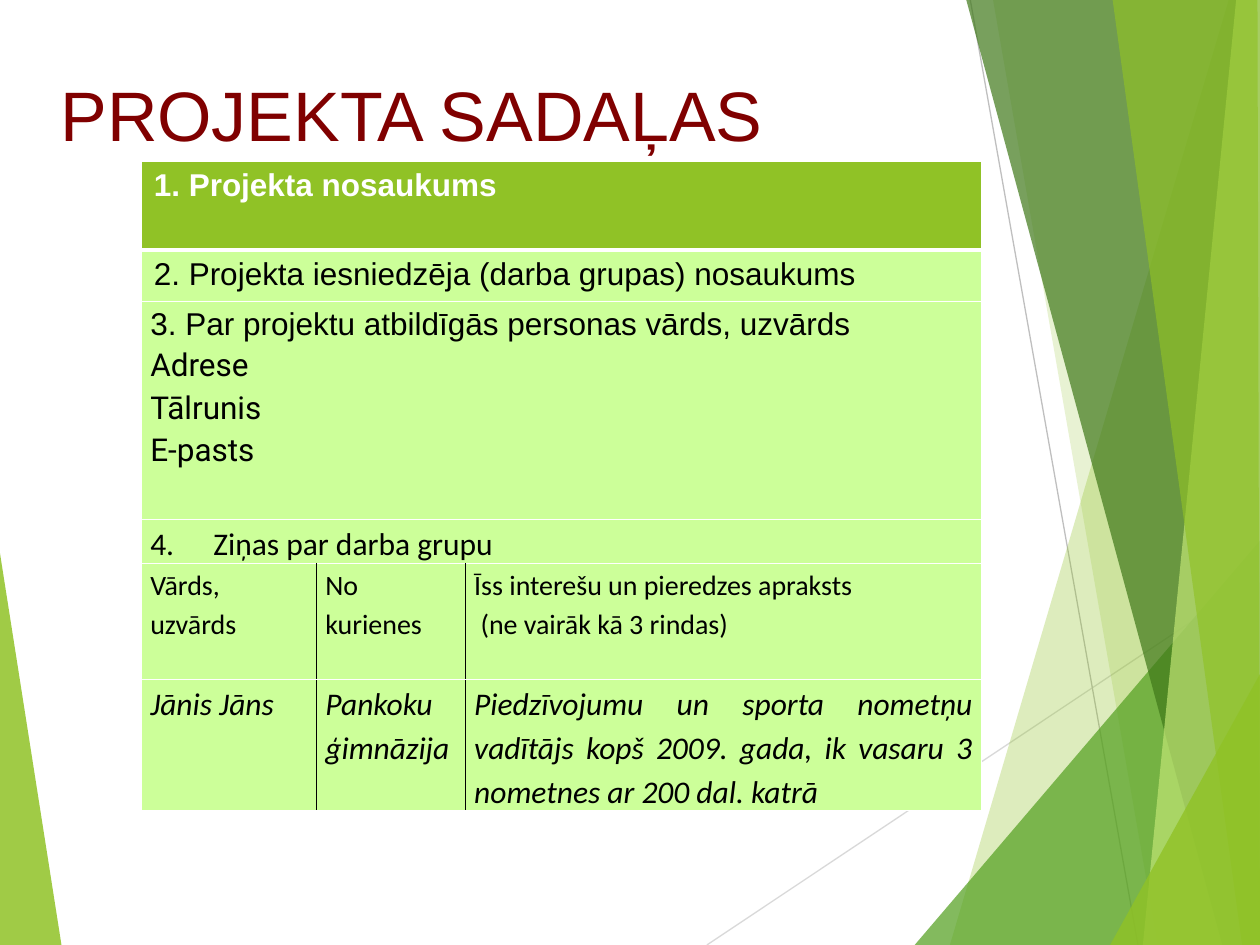
"""Build the project sections slide with a faceted green backdrop."""
import pptx
import pptx.util
import pptx.dml.color
import pptx.enum.shapes
import pptx.enum.text
import pptx.oxml.ns
from dataclasses import dataclass
from lxml import etree
from pptx.util import Cm, Pt

W, H = 25.4, 19.05


@dataclass(frozen=True)
class Theme:
    lime: str = "90C226"
    green: str = "54A021"
    dark: str = "3F7819"
    pale: str = "C0E474"
    cell: str = "CCFF99"
    title: str = "800000"
    ink: str = "000000"
    white: str = "FFFFFF"
    sans: str = "Arial"
    contact: str = "Roboto"
    body: str = "Calibri"
    title_pt: int = 40
    text_pt: int = 18
    small_pt: int = 16


T = Theme()
TITLE = "PROJEKTA SADAĻAS"
RIGHT_SIDE = [(W, H), (W, 0)]
CORNER = [(W, H)]
LEFT_FACET = ([(0, 11.15), (1.24, H), (0, H)], T.lime, 85)
LINES = [
    ((14.25, H), (W, 11.61), "D9D9D9"),
    ((19.56, 0), (22.94, H), "BFBFBF"),
]
RIGHT_FACETS = [
    ([(24.77, 0), (19.15, H)] + RIGHT_SIDE, T.lime, 30),
    ([(20.02, 0), (23.34, H)] + RIGHT_SIDE, T.lime, 20),
    ([(18.44, H), (W, 10.9)] + CORNER, T.green, 72),
    ([(19.48, 0), (24.64, H)] + RIGHT_SIDE, T.dark, 70),
    ([(24.92, 0), (23.04, H)] + RIGHT_SIDE, T.pale, 70),
    ([(22.43, 0), (25.04, H), (W, H), (25.35, 0)], T.lime, 65),
    ([(22.38, H), (W, 13.59)] + CORNER, T.lime, 80),
]

COLUMNS = [3.53, 3, 10.41]
HEADING = dict(font=T.sans, color=T.white, fill=T.lime, bold=True, loose=False)
PLAIN = dict(font=T.sans, loose=False)
FORM = dict(font=T.sans, rest=T.contact)
GROUP = dict(font=T.body)
LABELS = dict(font=T.body, size=T.small_pt)
EXAMPLE = dict(font=T.body, italic=True)
ROWS = [
    (1.78, HEADING, [["1. Projekta nosaukums"]]),
    (1.04, PLAIN, [["2. Projekta iesniedzēja (darba grupas) nosaukums"]]),
    (4.39, FORM, [["3. Par projektu atbildīgās personas vārds, uzvārds",
                   "Adrese", "Tālrunis", "E-pasts"]]),
    (0.89, GROUP, [["4.\tZiņas par darba grupu"]]),
    (2.34, LABELS, [["Vārds, uzvārds"], ["No kurienes"],
                    ["Īss interešu un pieredzes apraksts",
                     " (ne vairāk kā 3 rindas)"]]),
    (2.64, EXAMPLE, [["Jānis Jāns"], ["Pankoku ģimnāzija"],
                     ["Piedzīvojumu un sporta nometņu vadītājs kopš 2009. gada, "
                      "ik vasaru 3 nometnes ar 200 dal. katrā"]]),
]


def rgb(color):
    return pptx.dml.color.RGBColor.from_string(color)


def add(parent, tag, **attrs):
    return etree.SubElement(parent, pptx.oxml.ns.qn(tag), attrs)


def set_font(p, name, size, color, bold=False, italic=False):
    f = p.font
    f.name, f.size, f.bold, f.italic = name, Pt(size), bold, italic
    f.color.rgb = rgb(color)


def add_facet(shapes, points, color, opacity):
    points = [(Cm(x), Cm(y)) for x, y in points]
    builder = shapes.build_freeform(*points[0])
    builder.add_line_segments(points[1:], close=True)
    s = builder.convert_to_shape()
    s.shadow.inherit = False
    s.line.fill.background()
    s.fill.solid()
    s.fill.fore_color.rgb = rgb(color)
    clr = s._element.spPr.find(".//" + pptx.oxml.ns.qn("a:srgbClr"))
    add(clr, "a:alpha", val=str(opacity * 1000))


def add_line(shapes, start, end, color):
    s = shapes.add_connector(pptx.enum.shapes.MSO_CONNECTOR.STRAIGHT,
                             *[Cm(v) for v in start + end])
    s.line.color.rgb = rgb(color)
    s.line.width = Pt(0.75)
    add(s._element.spPr, "a:effectLst")


def add_title(shapes):
    tf = shapes.add_textbox(Cm(0.97), Cm(0.97), Cm(22.86), Cm(3.81)).text_frame
    tf.word_wrap = True
    p = tf.paragraphs[0]
    p.text = TITLE
    p.line_spacing = 1.2
    set_font(p, T.sans, T.title_pt, T.title)


def set_borders(cell, row, col, split):
    black_left, black_right = split and col > 0, split and col < len(COLUMNS) - 1
    sides = {
        "L": (T.ink if black_left else T.white, 1),
        "R": (T.ink if black_right else T.white, 1),
        "T": (T.white, 3 if row == 1 else 1),
        "B": (T.white, 3 if row == 0 else 1),
    }
    for side, (color, width) in sides.items():
        ln = add(cell._tc.get_or_add_tcPr(), "a:ln" + side, w=str(Pt(width)))
        add(add(ln, "a:solidFill"), "a:srgbClr", val=color)


def fill_text(cell, texts, style):
    loose = style.get("loose", True)
    cell.margin_left = cell.margin_right = Cm(0.18 if loose else 0.25)
    cell.margin_top = cell.margin_bottom = Cm(0 if loose else 0.13)
    tf = cell.text_frame
    for i, text in enumerate(texts):
        p = tf.paragraphs[0] if i == 0 else tf.add_paragraph()
        p.text = text
        if loose:
            p.alignment = pptx.enum.text.PP_ALIGN.JUSTIFY
            p.line_spacing = 1.15
        if "\t" in text:
            tabs = add(p._p.get_or_add_pPr(), "a:tabLst")
            add(tabs, "a:tab", pos=str(Cm(1.27)), algn="l")
        name = style.get("rest", style["font"]) if i else style["font"]
        set_font(p, name, style.get("size", T.text_pt), style.get("color", T.ink),
                 style.get("bold", False), style.get("italic", False))


def add_sections(shapes):
    heights = [height for height, _, _ in ROWS]
    table = shapes.add_table(len(ROWS), len(COLUMNS), Cm(2.85), Cm(3.26),
                             Cm(sum(COLUMNS)), Cm(sum(heights))).table
    table.horz_banding = False
    for column, width in zip(table.columns, COLUMNS):
        column.width = Cm(width)
    for r, (height, style, texts) in enumerate(ROWS):
        table.rows[r].height = Cm(height)
        split = len(texts) > 1
        for c in range(len(COLUMNS)):
            cell = table.cell(r, c)
            set_borders(cell, r, c, split)
            cell.fill.solid()
            cell.fill.fore_color.rgb = rgb(style.get("fill", T.cell))
        if not split:
            table.cell(r, 0).merge(table.cell(r, len(COLUMNS) - 1))
        for c, paragraphs in enumerate(texts):
            fill_text(table.cell(r, c), paragraphs, style)


def main():
    prs = pptx.Presentation()
    prs.slide_width, prs.slide_height = Cm(W), Cm(H)
    shapes = prs.slides.add_slide(prs.slide_layouts[6]).shapes
    add_facet(shapes, *LEFT_FACET)
    for line in LINES:
        add_line(shapes, *line)
    for facet in RIGHT_FACETS:
        add_facet(shapes, *facet)
    add_title(shapes)
    add_sections(shapes)
    prs.save("out.pptx")


if __name__ == "__main__":
    main()
